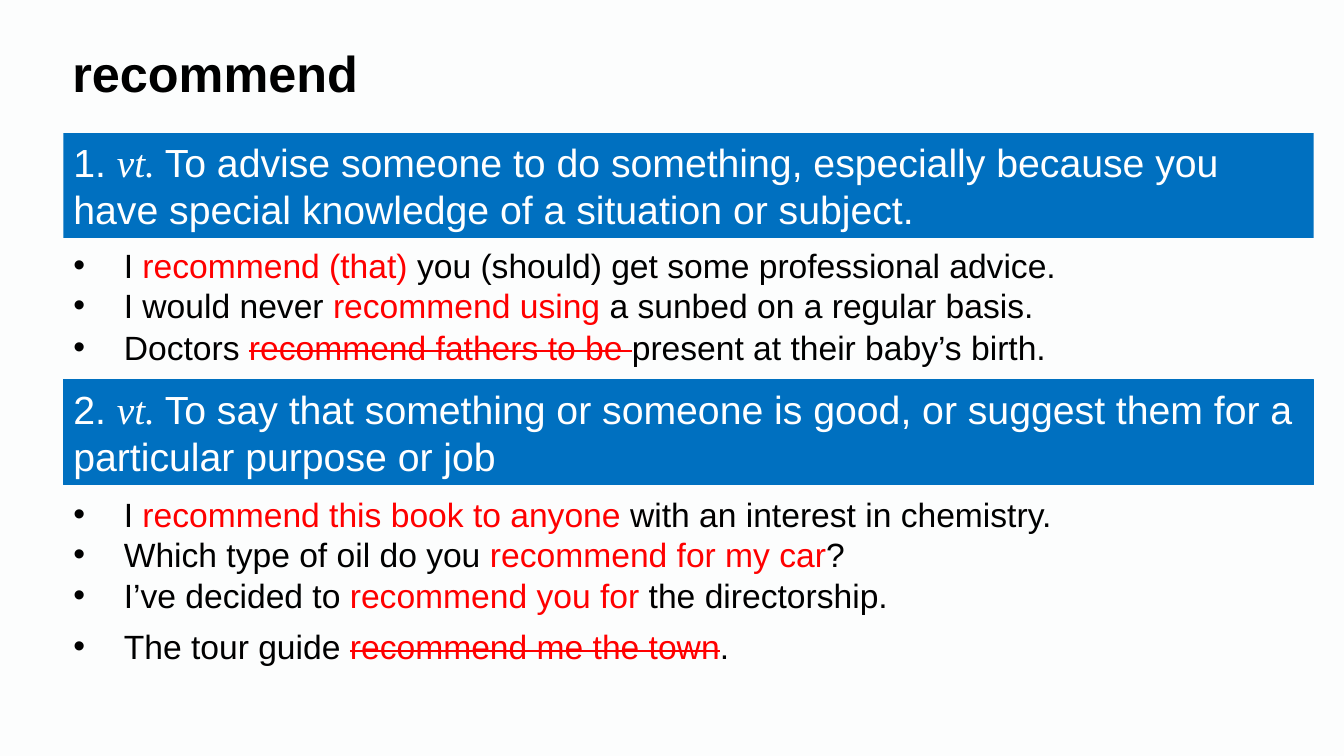
import pptx
import pptx.dml.color
import pptx.enum.shapes
import pptx.enum.text
import pptx.util
from lxml import etree
from pptx.oxml.ns import qn

PX = 9144  # EMU per px, 100 px to the inch
COLORS = {
    "background": "FCFDFD",
    "band": "0070C0",
    "band_text": "FFFFFF",
    "text": "000000",
    "pattern": "FF0000",
}
BODY_FONT = "Arial"
LABEL_FONT = "Times New Roman"
LEFT, BAND_WIDTH, LIST_WIDTH = 63, 1240, 1270
BAND_HEIGHT = 104
INDENT = 50


def rgb(name):
    return pptx.dml.color.RGBColor.from_string(COLORS[name])


def emu(box):
    return [length * PX for length in box]


def add_run(paragraph, text, size, color, font=BODY_FONT):
    run = paragraph.add_run()
    run.text = text
    run.font.size = pptx.util.Pt(size)
    run.font.name = font
    run.font.color.rgb = rgb(color)
    return run


def add_bullet(paragraph):
    properties = paragraph._p.get_or_add_pPr()
    properties.set("marL", str(INDENT * PX))
    properties.set("indent", str(-INDENT * PX))
    etree.SubElement(properties, qn("a:buFont")).set("typeface", BODY_FONT)
    etree.SubElement(properties, qn("a:buChar")).set("char", "•")


def add_headword(slide, box, word):
    shape = slide.shapes.add_shape(
        pptx.enum.shapes.MSO_SHAPE.ROUNDED_RECTANGLE, *emu(box))
    shape.shadow.inherit = False
    shape.fill.background()
    shape.line.fill.background()
    frame = shape.text_frame
    frame.word_wrap = True
    frame.vertical_anchor = pptx.enum.text.MSO_ANCHOR.MIDDLE
    paragraph = frame.paragraphs[0]
    paragraph.alignment = pptx.enum.text.PP_ALIGN.CENTER
    add_run(paragraph, word, 36, "text").font.bold = True


def add_definition(slide, box, number, meaning, outlined):
    shape = slide.shapes.add_shape(
        pptx.enum.shapes.MSO_SHAPE.RECTANGLE, *emu(box))
    shape.shadow.inherit = False
    shape.fill.solid()
    shape.fill.fore_color.rgb = rgb("band")
    if outlined:
        shape.line.color.rgb = rgb("band")
        shape.line.width = pptx.util.Pt(0.75)
    else:
        shape.line.fill.background()
    frame = shape.text_frame
    frame.word_wrap = True
    frame.auto_size = pptx.enum.text.MSO_AUTO_SIZE.SHAPE_TO_FIT_TEXT
    frame.vertical_anchor = pptx.enum.text.MSO_ANCHOR.TOP
    paragraph = frame.paragraphs[0]
    paragraph.alignment = pptx.enum.text.PP_ALIGN.LEFT
    add_run(paragraph, f"{number}. ", 28, "band_text")
    add_run(paragraph, "vt. ", 28, "band_text", LABEL_FONT).font.italic = True
    add_run(paragraph, meaning, 28, "band_text")


def add_examples(slide, box, sentences, wrong=False):
    """Bulleted sentences, each (before, pattern, after); wrong strikes the pattern."""
    frame = slide.shapes.add_textbox(*emu(box)).text_frame
    frame.word_wrap = True
    frame.auto_size = pptx.enum.text.MSO_AUTO_SIZE.SHAPE_TO_FIT_TEXT
    for index, (before, pattern, after) in enumerate(sentences):
        paragraph = frame.add_paragraph() if index else frame.paragraphs[0]
        add_bullet(paragraph)
        add_run(paragraph, before, 24, "text")
        run = add_run(paragraph, pattern, 24, "pattern")
        if wrong:
            run._r.get_or_add_rPr().set("strike", "sngStrike")
        add_run(paragraph, after, 24, "text")


def add_word_slide(presentation):
    slide = presentation.slides.add_slide(presentation.slide_layouts[6])
    slide.background.fill.solid()
    slide.background.fill.fore_color.rgb = rgb("background")

    add_headword(slide, (50, 34, 327, 75), "recommend")

    add_definition(
        slide, (LEFT, 132, BAND_WIDTH, BAND_HEIGHT), 1,
        "To advise someone to do something, especially because you have "
        "special knowledge of a situation or subject.", outlined=False)
    add_examples(slide, (LEFT, 238, LIST_WIDTH, 91), [
        ("I ", "recommend (that) ", "you (should) get some professional advice."),
        ("I would never ", "recommend using ", "a sunbed on a regular basis."),
    ])
    add_examples(slide, (LEFT, 319, LIST_WIDTH, 50), [
        ("Doctors ", "recommend fathers to be ", "present at their baby’s birth."),
    ], wrong=True)

    add_definition(
        slide, (LEFT, 377, BAND_WIDTH, BAND_HEIGHT), 2,
        "To say that something or someone is good, or suggest them for a "
        "particular purpose or job", outlined=True)
    add_examples(slide, (LEFT, 485, LIST_WIDTH, 131), [
        ("I ", "recommend this book to anyone ", "with an interest in chemistry."),
        ("Which type of oil do you ", "recommend for my car", "?"),
        ("I’ve decided to ", "recommend you for ", "the directorship."),
    ])
    add_examples(slide, (LEFT, 616, 735, 50), [
        ("The tour guide ", "recommend me the town", "."),
    ], wrong=True)


def main():
    presentation = pptx.Presentation()
    presentation.slide_width = 1333 * PX
    presentation.slide_height = 750 * PX
    add_word_slide(presentation)
    presentation.save("out.pptx")


if __name__ == "__main__":
    main()
